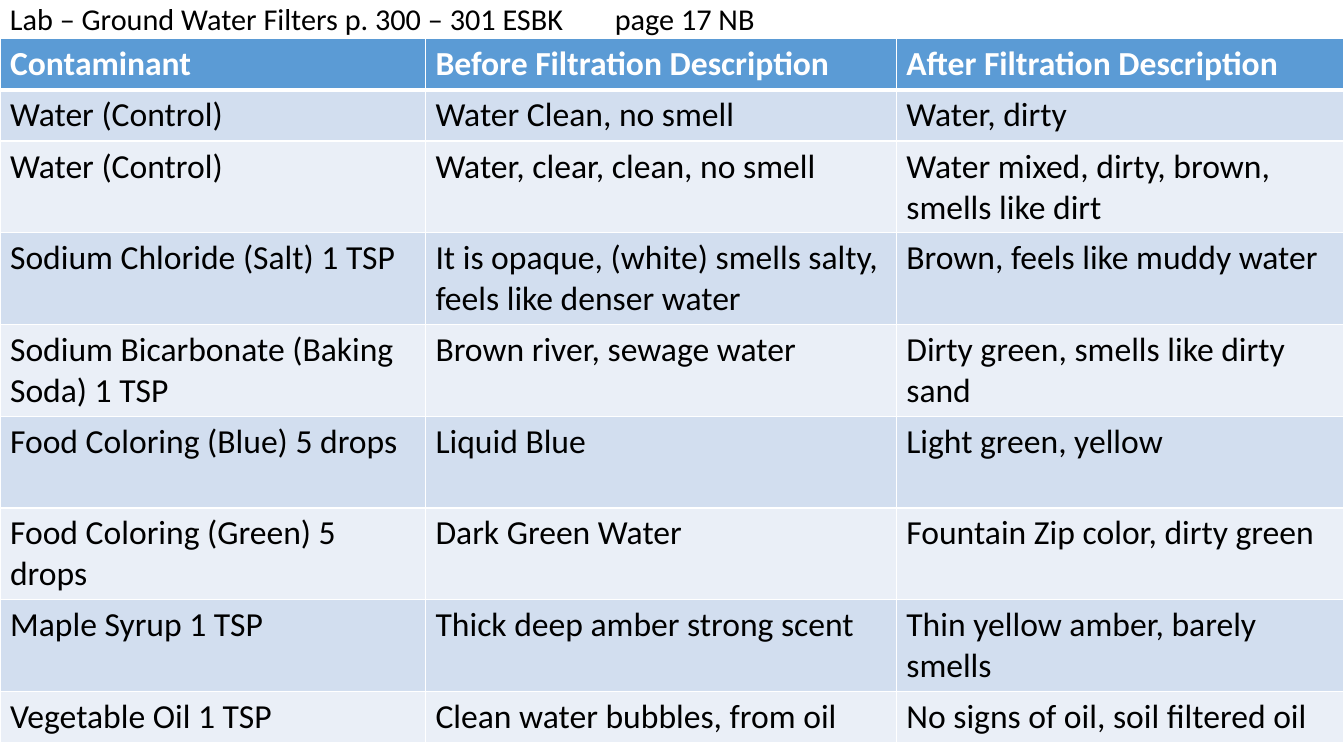
import pptx
import pptx.dml.color
import pptx.enum.text
import pptx.oxml
import pptx.oxml.ns
import pptx.util
from dataclasses import dataclass

Inches = pptx.util.Inches
Pt = pptx.util.Pt
RGB = pptx.dml.color.RGBColor.from_string


@dataclass(frozen=True)
class Theme:
    font: str = "Calibri"
    title_size: float = 21.6
    table_size: float = 24
    text: str = "000000"
    header_text: str = "FFFFFF"
    header_fill: str = "5B9BD5"
    bands: tuple = ("D2DEEF", "EAEFF7")
    border: str = "FFFFFF"
    border_width: float = 1
    header_rule: float = 3


TITLE = "Lab – Ground Water Filters p. 300 – 301 ESBK\t\tpage 17 NB"
RESULTS = [
    ("Contaminant", "Before Filtration Description", "After Filtration Description"),
    ("Water (Control)", "Water Clean, no smell", "Water, dirty"),
    ("Water (Control)", "Water, clear, clean, no smell",
     "Water mixed, dirty, brown, smells like dirt"),
    ("Sodium Chloride (Salt) 1 TSP",
     "It is opaque, (white) smells salty, feels like denser water",
     "Brown, feels like muddy water"),
    ("Sodium Bicarbonate (Baking Soda) 1 TSP", "Brown river, sewage water",
     "Dirty green, smells like dirty sand"),
    ("Food Coloring (Blue) 5 drops", "Liquid Blue", "Light green, yellow"),
    ("Food Coloring (Green) 5 drops", "Dark Green Water",
     "Fountain Zip color, dirty green"),
    ("Maple Syrup 1 TSP", "Thick deep amber strong scent",
     "Thin yellow amber, barely smells"),
    ("Vegetable Oil 1 TSP", "Clean water bubbles, from oil",
     "No signs of oil, soil filtered oil"),
]
COLUMN_WIDTHS = (4.22, 4.67, 4.44)
ONE_LINE, TWO_LINES = 0.51, 0.91
ROW_HEIGHTS = [ONE_LINE] * 2 + [TWO_LINES] * 6 + [ONE_LINE]


def write_text(tf, text, *, font, size, color, bold=False, spacing=None):
    """Put one formatted run in the first paragraph of a text frame."""
    p = tf.paragraphs[0]
    p.alignment = pptx.enum.text.PP_ALIGN.LEFT
    if spacing:
        p.line_spacing = spacing
    r = p.add_run()
    r.text = text
    r.font.name = font
    r.font.size = Pt(size)
    r.font.bold = bold
    r.font.color.rgb = RGB(color)


class SlideBuilder:
    def __init__(self, slide, theme):
        self.slide = slide
        self.theme = theme

    def title(self, text, left, top, width, height):
        sp = self.slide.shapes.add_textbox(
            Inches(left), Inches(top), Inches(width), Inches(height))
        tf = sp.text_frame
        tf.word_wrap = True
        tf.vertical_anchor = pptx.enum.text.MSO_ANCHOR.MIDDLE
        write_text(tf, text, font=self.theme.font, size=self.theme.title_size,
                   color=self.theme.text, spacing=0.9)

    def borders(self, cell, top, bottom):
        widths = {"L": self.theme.border_width, "R": self.theme.border_width,
                  "T": top, "B": bottom}
        for side, width in widths.items():
            cell._tc.get_or_add_tcPr().append(pptx.oxml.parse_xml(
                f'<a:ln{side} {pptx.oxml.ns.nsdecls("a")} w="{Pt(width)}">'
                f'<a:solidFill><a:srgbClr val="{self.theme.border}"/></a:solidFill>'
                f'</a:ln{side}>'))

    def table(self, rows, widths, heights, left, top):
        th = self.theme
        table = self.slide.shapes.add_table(
            len(rows), len(widths), Inches(left), Inches(top),
            Inches(sum(widths)), Inches(sum(heights))).table
        table.horz_banding = False
        for column, width in zip(table.columns, widths):
            column.width = Inches(width)
        for i, (values, height) in enumerate(zip(rows, heights)):
            table.rows[i].height = Inches(height)
            header = i == 0
            fill = th.header_fill if header else th.bands[(i - 1) % 2]
            for j, value in enumerate(values):
                cell = table.cell(i, j)
                self.borders(cell,
                             top=th.header_rule if i == 1 else th.border_width,
                             bottom=th.header_rule if header else th.border_width)
                cell.fill.solid()
                cell.fill.fore_color.rgb = RGB(fill)
                write_text(cell.text_frame, value, font=th.font, size=th.table_size,
                           color=th.header_text if header else th.text, bold=header)


def main():
    prs = pptx.Presentation()
    prs.slide_width, prs.slide_height = Inches(13.33), Inches(7.5)
    s = prs.slides.add_slide(prs.slide_layouts[6])
    builder = SlideBuilder(s, Theme())

    # Lab heading
    builder.title(TITLE, 0, 0, 12.4, 0.42)

    # Filtration results
    builder.table(RESULTS, COLUMN_WIDTHS, ROW_HEIGHTS, 0, 0.38)

    prs.save("out.pptx")


if __name__ == "__main__":
    main()
